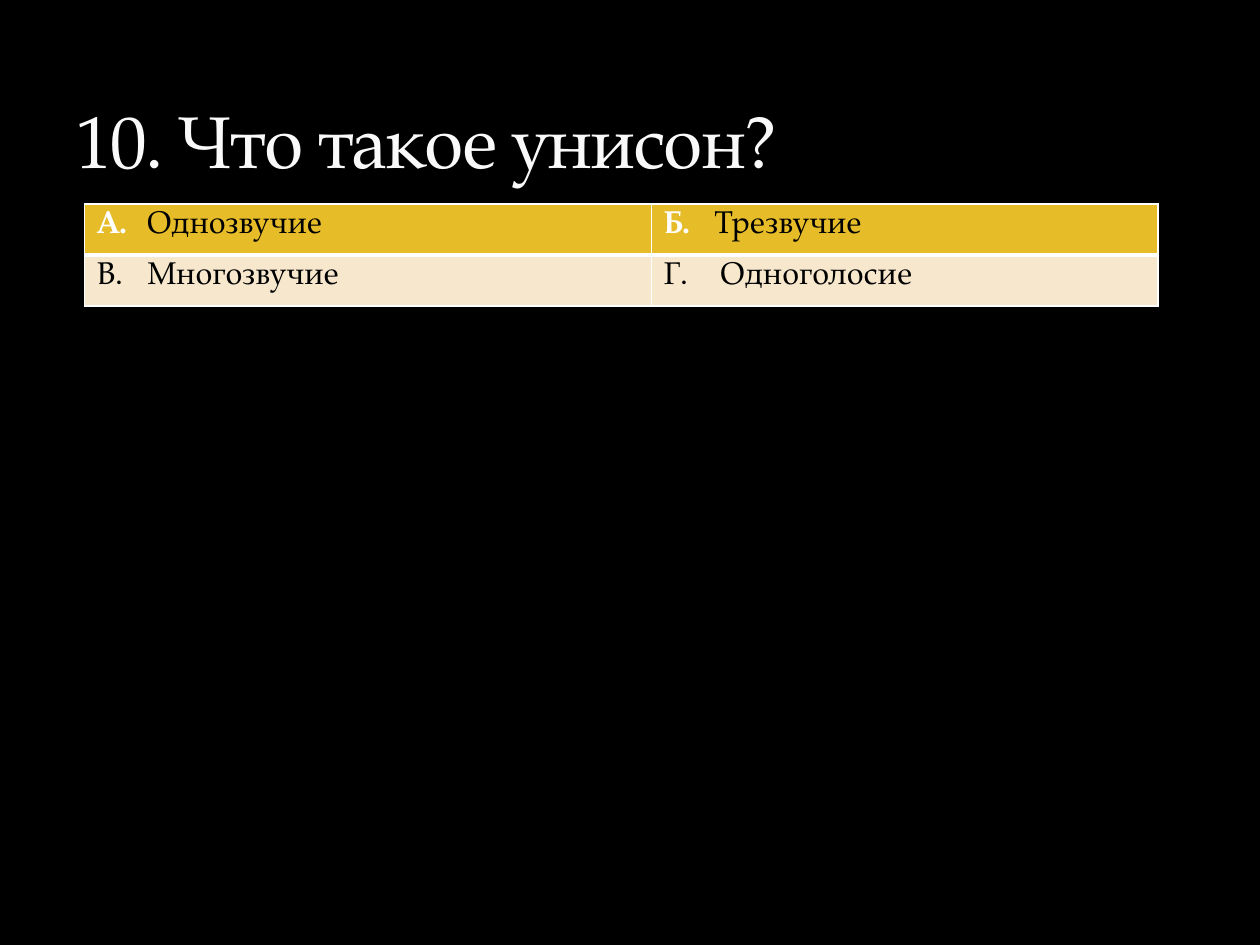
from lxml.etree import SubElement
from pptx import Presentation
from pptx.dml.color import RGBColor
from pptx.enum.text import MSO_ANCHOR
from pptx.oxml.ns import qn
from pptx.util import Cm, Pt

TITLE = "10. Что такое унисон?"
# Letter, answer, distance in cm from the letter to the answer
ANSWERS = [
    [("А.", "Однозвучие", 1), ("Б.", "Трезвучие", 1.02)],
    [("В.", "Многозвучие", 1.02), ("Г.", "Одноголосие", 1.13)],
]
COLUMN_WIDTHS = [11.43, 10.21]
ROW_HEIGHT = 1.03
FONT = "TeX Gyre Pagella"
COLORS = {
    "background": "000000",
    "title": "F9F9F9",
    "text": "000000",
    "header letter": "FFFFFF",
    "header": "E7BC29",
    "body": "F6E7CD",
    "border": "FFFFFF",
}


def color(name):
    return RGBColor.from_string(COLORS[name])


def add_run(paragraph, text, color_name, **font_values):
    run = paragraph.add_run()
    run.text = text
    run.font.color.rgb = color(color_name)
    for name, value in {"name": FONT, **font_values}.items():
        setattr(run.font, name, value)
    return run


def set_borders(cell, widths):
    """Draw the cell's borders; widths maps side tags to points."""
    properties = cell._tc.get_or_add_tcPr()
    for position, (side, width) in enumerate(widths.items()):
        line = properties.makeelement(qn(f"a:{side}"), {"w": str(Pt(width))})
        fill = SubElement(line, qn("a:solidFill"))
        SubElement(fill, qn("a:srgbClr"), val=COLORS["border"])
        properties.insert(position, line)


def add_title(slide):
    box = slide.shapes.add_textbox(Cm(1.27), Cm(0.43), Cm(22.86), Cm(3.38))
    frame = box.text_frame
    frame.word_wrap = True
    frame.vertical_anchor = MSO_ANCHOR.BOTTOM
    run = add_run(frame.paragraphs[0], TITLE, "title", size=Pt(42))
    run.font._element.set("spc", "-100")


def fill_cell(cell, answer, is_header):
    letter, text, gap = answer
    cell.fill.solid()
    cell.fill.fore_color.rgb = color("header" if is_header else "body")
    middle = 3 if is_header else 1
    set_borders(cell, {"lnL": 1, "lnR": 1, "lnT": 1, "lnB": middle})
    paragraph = cell.text_frame.paragraphs[0]
    properties = paragraph._p.get_or_add_pPr()
    properties.set("marL", str(Cm(gap)))
    properties.set("indent", str(-Cm(gap)))
    letter_color = "header letter" if is_header else "text"
    add_run(paragraph, f"{letter}\t", letter_color, size=Pt(18), bold=is_header)
    add_run(paragraph, text, "text", size=Pt(18), bold=False)


def add_answers(slide):
    rows, columns = len(ANSWERS), len(COLUMN_WIDTHS)
    table = slide.shapes.add_table(
        rows, columns, Cm(1.7), Cm(4.11),
        Cm(sum(COLUMN_WIDTHS)), Cm(rows * ROW_HEIGHT),
    ).table
    for column, width in zip(table.columns, COLUMN_WIDTHS):
        column.width = Cm(width)
    for index, (row, answers) in enumerate(zip(table.rows, ANSWERS)):
        row.height = Cm(ROW_HEIGHT)
        for cell, answer in zip(row.cells, answers):
            fill_cell(cell, answer, is_header=index == 0)


def main():
    presentation = Presentation()
    presentation.slide_width, presentation.slide_height = Cm(25.4), Cm(19.05)
    slide = presentation.slides.add_slide(presentation.slide_layouts[6])
    slide.background.fill.solid()
    slide.background.fill.fore_color.rgb = color("background")
    add_answers(slide)
    add_title(slide)
    presentation.save("out.pptx")


if __name__ == "__main__":
    main()
